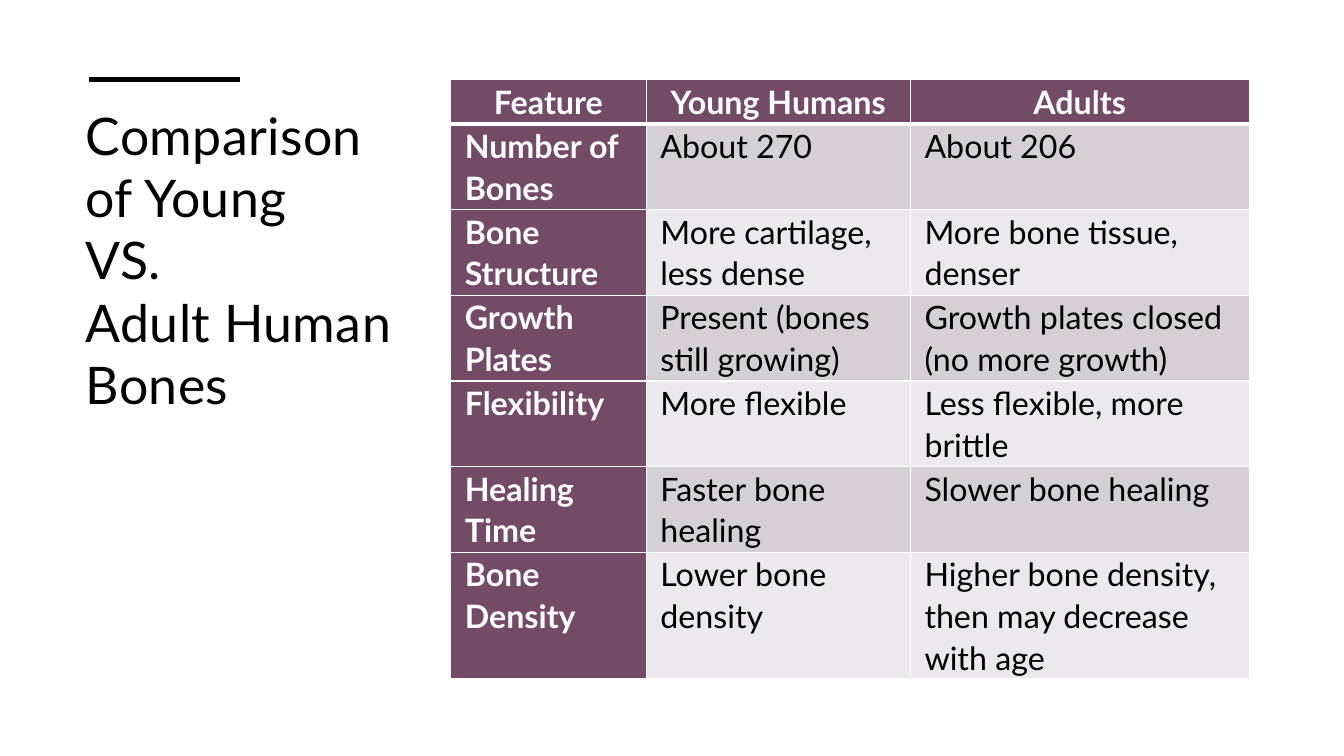
from pptx import Presentation
from pptx.dml.color import RGBColor
from pptx.enum.shapes import MSO_CONNECTOR
from pptx.enum.text import MSO_ANCHOR, MSO_AUTO_SIZE, PP_ALIGN
from pptx.oxml.ns import qn
from pptx.util import Inches, Pt
from lxml.etree import SubElement

PLUM, DARK, PALE = "734B67", "D5D0D3", "EBE9EB"
WHITE, BLACK = "FFFFFF", "000000"


def color(code):
    return RGBColor.from_string(code)


def style(part, form):
    for name, value in form.items():
        setattr(part, name, value)


deck = Presentation()
style(deck, {"slide_width": Inches(13.33), "slide_height": Inches(7.5)})
slide = deck.slides.add_slide(deck.slide_layouts[5])

# Title
title = slide.shapes.title
style(title, {"left": Inches(0.75), "top": Inches(0.98),
              "width": Inches(3.36), "height": Inches(4.28)})
frame = title.text_frame
frame.text = "Comparison of Young\vVS. \vAdult Human Bones"
style(frame, {"word_wrap": True, "auto_size": MSO_AUTO_SIZE.NONE,
              "vertical_anchor": MSO_ANCHOR.TOP})
para = frame.paragraphs[0]
style(para, {"alignment": PP_ALIGN.LEFT, "line_spacing": 1.0})
for run in para.runs:
    style(run.font, {"name": "Lato", "size": Pt(37)})
    run.font.color.rgb = color(BLACK)
    run.font._element.set("spc", "30")

# Rule above the title
rule = slide.shapes.add_connector(
    MSO_CONNECTOR.STRAIGHT, Inches(0.88), Inches(0.79), Inches(2.38), Inches(0.79))
rule.line.color.rgb = color(BLACK)
rule.line.width = Pt(3.5)
SubElement(rule._element.spPr, qn("a:effectLst"))

# Table
rows = [
    ("Feature", "Young Humans", "Adults"),
    ("Number of Bones", "About 270", "About 206"),
    ("Bone Structure", "More cartilage, less dense", "More bone tissue, denser"),
    ("Growth Plates", "Present (bones still growing)",
     "Growth plates closed (no more growth)"),
    ("Flexibility", "More flexible", "Less flexible, more brittle"),
    ("Healing Time", "Faster bone healing", "Slower bone healing"),
    ("Bone Density", "Lower bone density",
     "Higher bone density, then may decrease with age"),
]
wide = [1.94, 2.62, 3.36]
high = [0.44] + [0.85] * 5 + [1.25]
table = slide.shapes.add_table(
    len(rows), len(wide), Inches(4.47), Inches(0.79),
    Inches(sum(wide)), Inches(sum(high))).table
table.first_col = True
for col, size in zip(table.columns, wide):
    col.width = Inches(size)
for row, size in zip(table.rows, high):
    row.height = Inches(size)

for r, texts in enumerate(rows):
    for c, text in enumerate(texts):
        cell = table.cell(r, c)
        head = r == 0 or c == 0
        style(cell, {"text": text, "vertical_anchor": MSO_ANCHOR.TOP,
                     "margin_left": Inches(0.14), "margin_right": Inches(0.14),
                     "margin_top": 0, "margin_bottom": 0})

        # White borders, thick under the header
        thick = {0: "lnB", 1: "lnT"}.get(r)
        for side in ("lnL", "lnR", "lnT", "lnB"):
            width = Pt(3 if side == thick else 1)
            edge = SubElement(cell._tc.tcPr, qn("a:" + side), w=str(width))
            paint = SubElement(edge, qn("a:solidFill"))
            SubElement(paint, qn("a:srgbClr"), val=WHITE)
        cell.fill.solid()
        cell.fill.fore_color.rgb = color(PLUM if head else DARK if r % 2 else PALE)

        para = cell.text_frame.paragraphs[0]
        style(para, {"alignment": PP_ALIGN.LEFT if r else PP_ALIGN.CENTER,
                     "line_spacing": 1.07, "space_after": Pt(8)})
        font = para.runs[0].font
        style(font, {"name": "Lato", "size": Pt(23), "bold": head})
        font.color.rgb = color(WHITE if head else BLACK)

deck.save("out.pptx")
